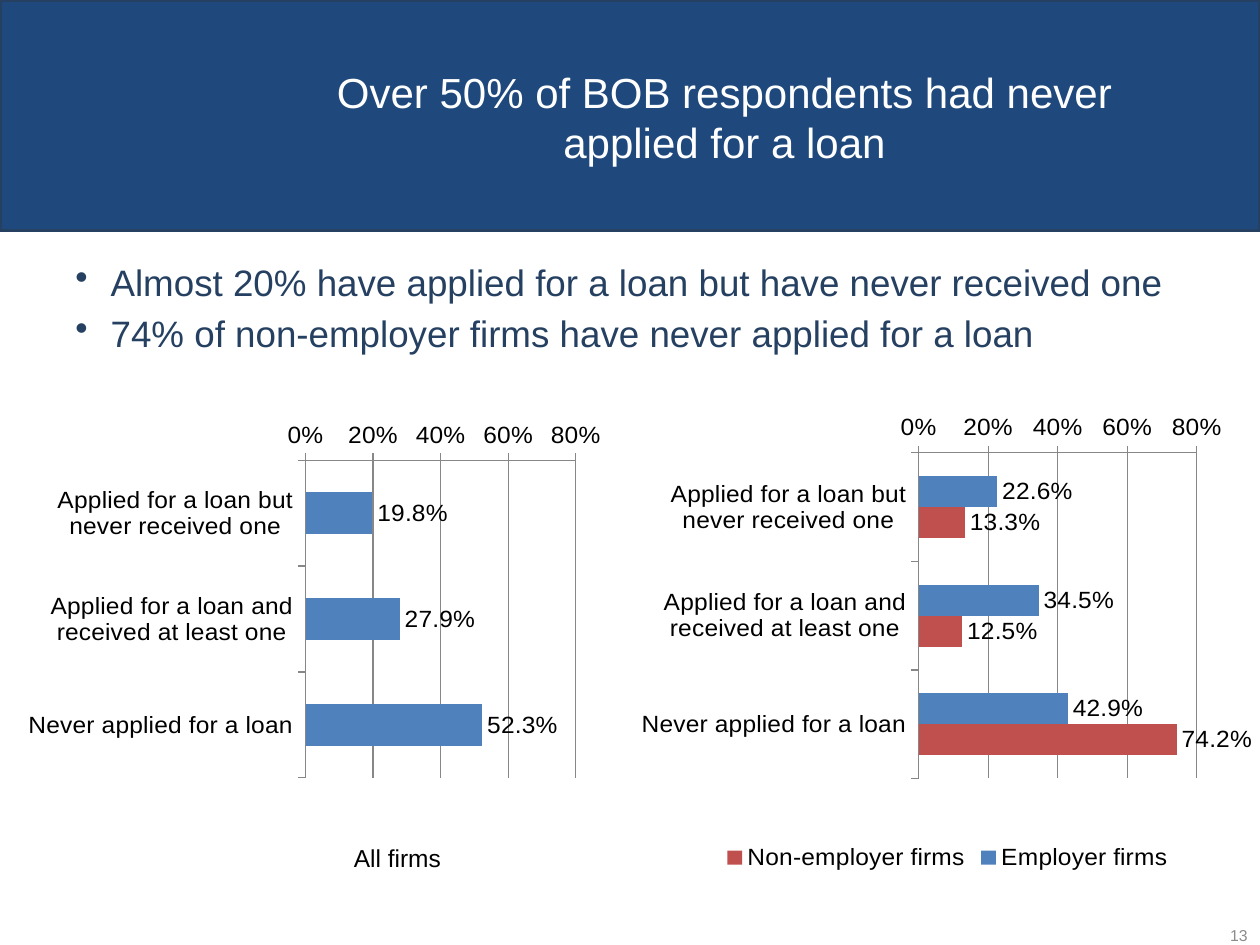
from dataclasses import dataclass

import pptx
import pptx.chart.data
import pptx.dml.color
import pptx.enum.chart
import pptx.enum.shapes
import pptx.enum.text
import pptx.oxml
import pptx.oxml.ns
import pptx.util
from pptx.util import Inches, Pt

RGB = pptx.dml.color.RGBColor
ALIGN = pptx.enum.text.PP_ALIGN
ANCHOR = pptx.enum.text.MSO_ANCHOR
BLUE = RGB(0x4F, 0x81, 0xBD)
RED = RGB(0xC0, 0x50, 0x4D)
NAVY = RGB(0x1F, 0x49, 0x7D)
DARK = RGB(0x25, 0x40, 0x61)
GREY = RGB(0x87, 0x87, 0x87)
PALE = RGB(0x8C, 0x8C, 0x8C)
WHITE = RGB(0xFF, 0xFF, 0xFF)
BLACK = RGB(0, 0, 0)
FACE = "Arial"

Box = tuple[float, float, float, float]
GROUPS = (
    "Applied for a loan but never received one",
    "Applied for a loan and received at least one",
    "Never applied for a loan",
)
POINTS = (
    "Almost 20% have applied for a loan but have never received one",
    "74% of non-employer firms have never applied for a loan",
)


@dataclass
class Series:
    name: str
    values: tuple[float, ...]
    color: RGB


@dataclass
class Bars:
    box: Box
    plot: Box
    series: tuple[Series, ...]
    legend: bool


@dataclass
class Note:
    text: str
    box: Box
    size: float
    color: RGB
    align: ALIGN
    wrap: bool
    anchor: ANCHOR


CHARTS = (
    Bars((0.15, 3.35, 4.8, 3.47), (0.474, 0.044, 0.447, 0.761),
         (Series("All firms", (0.198, 0.279, 0.523), BLUE),), False),
    Bars((5.04, 3.29, 4.96, 3.66), (0.454, 0.042, 0.445, 0.738),
         (Series("Employer firms", (0.226, 0.345, 0.429), BLUE),
          Series("Non-employer firms", (0.133, 0.125, 0.742), RED)), True),
)
NOTES = (
    Note("All firms", (2.71, 6.64, 0.9, 0.34), 14, BLACK,
         ALIGN.LEFT, False, ANCHOR.TOP),
    Note("13", (7.67, 7.35, 2.33, 0.15), 9, PALE,
         ALIGN.RIGHT, True, ANCHOR.MIDDLE),
)


def style(font, size: float, color: RGB) -> None:
    font.name = FACE
    font.size = Pt(size)
    font.color.rgb = color


def place(shape, box: Box) -> None:
    shape.left, shape.top, shape.width, shape.height = map(Inches, box)


def set_plot(chart, plot: Box) -> None:
    area = chart.element.chart.plotArea
    for old in area.findall(pptx.oxml.ns.qn("c:layout")):
        area.remove(old)
    sizes = "".join(
        f'<c:{key} val="{val}"/>' for key, val in zip("xywh", plot))
    area.insert(0, pptx.oxml.parse_xml(
        f'<c:layout {pptx.oxml.ns.nsdecls("c")}><c:manualLayout>'
        '<c:layoutTarget val="inner"/><c:xMode val="edge"/>'
        f'<c:yMode val="edge"/>{sizes}</c:manualLayout></c:layout>'))


def add_bars(slide, bars: Bars) -> None:
    data = pptx.chart.data.CategoryChartData(number_format="0.0%")
    data.categories = GROUPS
    for item in bars.series:
        data.add_series(item.name, item.values)
    chart = slide.shapes.add_chart(
        pptx.enum.chart.XL_CHART_TYPE.BAR_CLUSTERED,
        *map(Inches, bars.box), data).chart
    style(chart.font, 14, BLACK)
    chart.has_title = False
    set_plot(chart, bars.plot)

    plot = chart.plots[0]
    plot.gap_width = 150
    plot.overlap = 0
    plot.vary_by_categories = False
    for series, item in zip(plot.series, bars.series):
        series.format.fill.solid()
        series.format.fill.fore_color.rgb = item.color
        labels = series.data_labels
        labels.show_value = True
        labels.number_format = "0.0%"
        labels.number_format_is_linked = False
        labels.position = pptx.enum.chart.XL_LABEL_POSITION.OUTSIDE_END

    groups, scale = chart.category_axis, chart.value_axis
    groups.reverse_order = True
    groups.crosses = pptx.enum.chart.XL_AXIS_CROSSES.MAXIMUM
    scale.minimum_scale, scale.maximum_scale = 0, 0.8
    scale.major_unit = 0.2
    scale.has_major_gridlines = True
    scale.tick_labels.number_format = "0%"
    scale.tick_labels.number_format_is_linked = False
    for axis in (groups, scale):
        axis.major_tick_mark = pptx.enum.chart.XL_TICK_MARK.OUTSIDE
    for part in (groups, scale, scale.major_gridlines):
        part.format.line.color.rgb = GREY
        part.format.line.width = Pt(0.75)

    chart.has_legend = bars.legend
    if bars.legend:
        chart.legend.position = pptx.enum.chart.XL_LEGEND_POSITION.BOTTOM
        chart.legend.include_in_layout = False


def add_note(slide, note: Note) -> None:
    frame = slide.shapes.add_textbox(*map(Inches, note.box)).text_frame
    frame.word_wrap = note.wrap
    frame.vertical_anchor = note.anchor
    para = frame.paragraphs[0]
    para.text = note.text
    para.alignment = note.align
    style(para.font, note.size, note.color)


def add_points(slide, box: Box) -> None:
    frame = slide.shapes.add_textbox(*map(Inches, box)).text_frame
    frame.word_wrap = True
    for i, text in enumerate(POINTS):
        para = frame.add_paragraph() if i else frame.paragraphs[0]
        para.text = text
        if i:
            para.space_before = Pt(4.2)
        props = para._p.get_or_add_pPr()
        props.set("marL", str(Inches(0.28)))
        props.set("indent", str(Inches(-0.28)))
        props.append(pptx.oxml.parse_xml(
            f'<a:buChar {pptx.oxml.ns.nsdecls("a")} char="•"/>'))
        style(para.font, 21, DARK)


def add_title(slide, text: str) -> None:
    title = slide.shapes.title
    band = slide.shapes.add_shape(
        pptx.enum.shapes.MSO_SHAPE.RECTANGLE,
        *map(Inches, (0, 0, 10, 1.83)))
    band.shadow.inherit = False
    band.fill.solid()
    band.fill.fore_color.rgb = NAVY
    band.line.color.rgb = DARK
    band.line.width = Pt(2)
    title.element.addprevious(band.element)
    place(title, (2, 0.3, 7.5, 1.25))
    frame = title.text_frame
    frame.text = text
    frame.word_wrap = True
    frame.vertical_anchor = ANCHOR.MIDDLE
    para = frame.paragraphs[0]
    para.alignment = ALIGN.CENTER
    style(para.font, 24, WHITE)


def main() -> None:
    deck = pptx.Presentation()
    deck.slide_width, deck.slide_height = Inches(10), Inches(7.5)
    slide = deck.slides.add_slide(deck.slide_layouts[5])
    add_title(slide, "Over 50% of BOB respondents had never applied for a loan")
    add_points(slide, (0.5, 2.01, 9, 1.16))
    for bars in CHARTS:
        add_bars(slide, bars)
    for note in NOTES:
        add_note(slide, note)
    deck.save("out.pptx")


if __name__ == "__main__":
    main()
